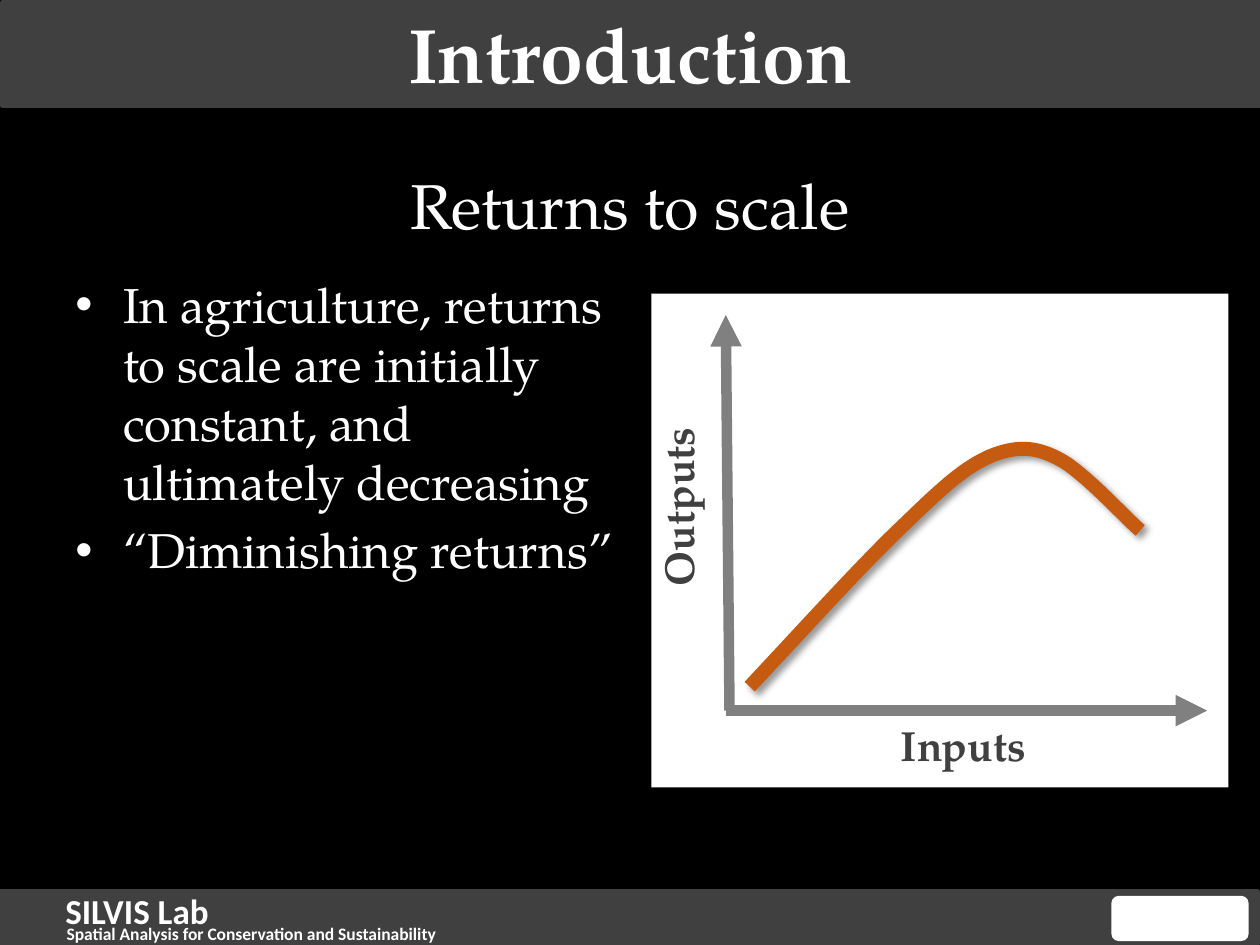
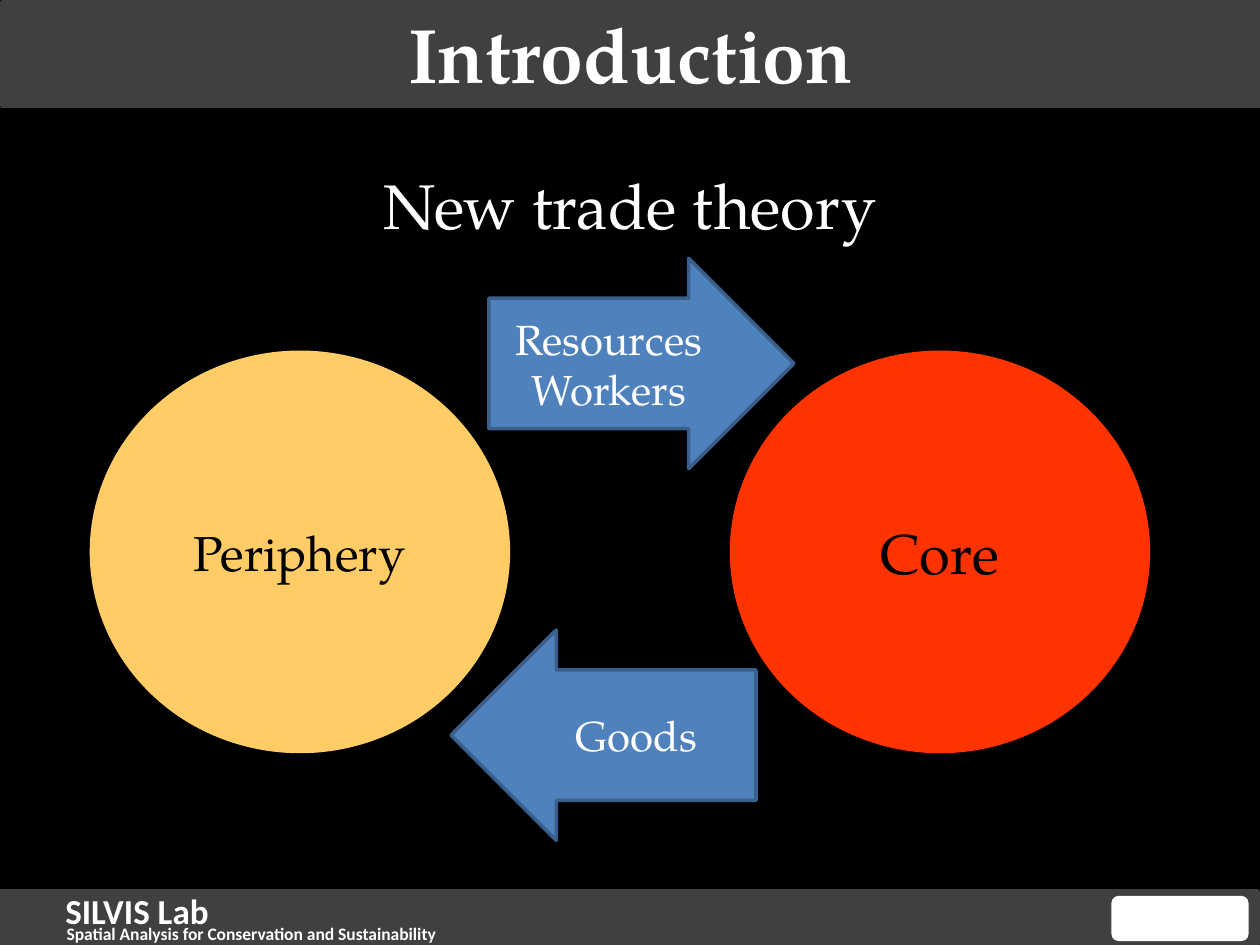
from lxml import etree
from pptx import Presentation
from pptx import util as u
from pptx.dml.color import RGBColor
from pptx.enum import shapes, text
from pptx.oxml.ns import qn

SERIF, SANS = "TeX Gyre Pagella", "Calibri"
WHITE, BLACK, BAND, AXIS = "FFFFFF", "000000", "404040", "808080"
CURVE, ARROW, ARROW_EDGE = "C55A11", "4F81BD", "3A5F8C"
PERIPHERY, CORE = "FFCC66", "FF3300"
CENTER, LEFT = text.PP_ALIGN.CENTER, text.PP_ALIGN.LEFT
MIDDLE, TOP = text.MSO_ANCHOR.MIDDLE, text.MSO_ANCHOR.TOP
KIND = shapes.MSO_SHAPE


def rgb(value):
    """Turn a hex string into a colour."""
    return RGBColor.from_string(value)


def sub(parent, tag, **attrs):
    """Append a drawing element with attributes and return it."""
    el = etree.SubElement(parent, qn(tag))
    for key, value in attrs.items():
        el.set(key, str(value))
    return el


def box(values):
    """Convert left, top, width and height to lengths."""
    return [u.Inches(v) for v in values]


def paint_line(line, color, width):
    """Set the colour and point width of a line."""
    line.color.rgb = rgb(color)
    line.width = u.Pt(width)


def write(tf, lines, size, color=WHITE, font=SERIF, bold=False, align=LEFT, anchor=TOP, bullets=False):
    """Fill a text frame with one paragraph per line."""
    tf.word_wrap = True
    tf.vertical_anchor = anchor
    for i, line in enumerate(lines):
        p = tf.paragraphs[0] if i == 0 else tf.add_paragraph()
        p.alignment = align
        if bullets:
            pPr = p._p.get_or_add_pPr()
            pPr.set("marL", str(u.Inches(0.38)))
            pPr.set("indent", str(u.Inches(-0.38)))
            sub(pPr, "a:buFont", typeface="Arial")
            sub(pPr, "a:buChar", char="•")
            if i:
                p.space_before = u.Pt(size * 0.2)
        r = p.add_run()
        r.text = line
        r.font.name, r.font.size, r.font.bold = font, u.Pt(size), bold
        r.font.color.rgb = rgb(color)


def add_text(s, at, lines, size, **style):
    """Add a text box and return its frame."""
    tf = s.shapes.add_textbox(*box(at)).text_frame
    write(tf, lines, size, **style)
    return tf


def add_shape(s, kind, at, fill, line=None, width=0):
    """Add a flat preset shape."""
    sp = s.shapes.add_shape(kind, *box(at))
    sp.shadow.inherit = False
    sp.fill.solid()
    sp.fill.fore_color.rgb = rgb(fill)
    if line:
        paint_line(sp.line, line, width)
    else:
        sp.line.fill.background()
    return sp


def add_axis(s, start, end):
    """Add a thick axis with an arrowhead at its end."""
    cx = s.shapes.add_connector(shapes.MSO_CONNECTOR.STRAIGHT, *box(start + end))
    paint_line(cx.line, AXIS, 6)
    sub(cx.line._get_or_add_ln(), "a:tailEnd", type="triangle")
    sub(cx._element.spPr, "a:effectLst")


def bezier(a, b, c, d, steps=16):
    """Return points along a cubic curve after its start."""
    points = []
    for i in range(1, steps + 1):
        t = i / steps
        weights = ((1 - t) ** 3, 3 * t * (1 - t) ** 2, 3 * t * t * (1 - t), t ** 3)
        points.append(tuple(u.Inches(sum(w * q[k] for w, q in zip(weights, (a, b, c, d))))
                            for k in (0, 1)))
    return points


def add_curve(s, knots):
    """Draw a shadowed curve through chained cubic segments."""
    builder = s.shapes.build_freeform(*box(knots[0]))
    for i in range(0, len(knots) - 1, 3):
        builder.add_line_segments(bezier(*knots[i:i + 4]), close=False)
    sp = builder.convert_to_shape()
    sp.fill.background()
    paint_line(sp.line, CURVE, 8)
    sp.shadow.inherit = False
    effects = sp._element.spPr.find(qn("a:effectLst"))
    shadow = sub(effects, "a:outerShdw", blurRad=u.Pt(4), dist=u.Pt(3),
                 dir=45 * 60000, algn="tl", rotWithShape=0)
    sub(sub(shadow, "a:srgbClr", val=BLACK), "a:alpha", val=40000)


def add_circle(s, left, color, label, size):
    """Add a labelled region circle."""
    sp = add_shape(s, KIND.OVAL, (left, 2.99, 2.92, 2.78), color, color, 30)
    write(sp.text_frame, [label], size, color=BLACK, align=CENTER, anchor=MIDDLE)


def add_flow(s, kind, left, top, lines):
    """Add a block arrow naming what flows between regions."""
    sp = add_shape(s, kind, (left, top, 2.42, 1.67), ARROW, ARROW_EDGE, 2)
    sp.adjustments[0], sp.adjustments[1] = 0.62, 0.5
    write(sp.text_frame, lines, 24, align=CENTER, anchor=MIDDLE)


def new_slide(prs, heading):
    """Add a slide with bands, footer, title and heading."""
    s = prs.slides.add_slide(prs.slide_layouts[6])
    s.background.fill.solid()
    s.background.fill.fore_color.rgb = rgb(BLACK)
    for at in ((0.02, 0.02, 9.98, 0.82), (0, 7.08, 9.98, 0.41)):
        add_shape(s, KIND.RECTANGLE, at, BAND, BAND, 3)
    add_text(s, (0.42, 7.01, 2.43, 0.44), ["SILVIS Lab"], 20, font=SANS, bold=True)
    add_text(s, (0.43, 7.28, 4.92, 0.17), ["Spatial Analysis for Conservation and Sustainability"],
             10, font=SANS, bold=True)
    add_shape(s, KIND.ROUNDED_RECTANGLE, (8.82, 7.11, 1.09, 0.36), WHITE)
    add_text(s, (0.01, 0, 9.99, 0.83), ["Introduction"], 44, bold=True, align=CENTER, anchor=MIDDLE)
    add_text(s, (0.5, 1, 9, 1.25), [heading], 36, align=CENTER, anchor=MIDDLE)
    return s


def returns_slide(prs):
    """Build the slide on returns to scale."""
    s = new_slide(prs, "Returns to scale")
    add_shape(s, KIND.RECTANGLE, (5.17, 2.33, 4.58, 3.92), WHITE)
    add_text(s, (0.5, 2.13, 4.5, 4.95),
             ["In agriculture, returns to scale are initially constant, and ultimately decreasing",
              "“Diminishing returns”"], 28, bullets=True)
    add_axis(s, (5.76, 5.64), (9.58, 5.64))
    add_axis(s, (5.79, 5.64), (5.76, 2.5))
    add_curve(s, [(5.95, 5.45), (6.42, 4.95), (6.87, 4.45), (7.19, 4.15), (7.51, 3.84),
                  (7.66, 3.71), (7.86, 3.62), (8.06, 3.54), (8.21, 3.54), (8.4, 3.64),
                  (8.6, 3.74), (8.94, 4.12), (9.05, 4.21)])
    label = dict(size=24, color=BAND, bold=True)
    inputs = add_text(s, (7.05, 5.66, 1.21, 0.5), ["Inputs"], **label)
    outputs = add_text(s, (5.13, 3.38, 0.61, 1.37), ["Outputs"], **label)
    outputs._txBody.bodyPr.set("vert", "vert270")
    inputs.word_wrap = outputs.word_wrap = False


def trade_slide(prs):
    """Build the slide on new trade theory."""
    s = new_slide(prs, "New trade theory")
    add_circle(s, 6, CORE, "Core", 32)
    add_circle(s, 0.92, PERIPHERY, "Periphery", 28)
    add_flow(s, KIND.RIGHT_ARROW, 3.88, 2.05, ["Resources", "Workers"])
    add_flow(s, KIND.LEFT_ARROW, 3.58, 5, ["Goods"])


def main():
    """Build and save the presentation."""
    prs = Presentation()
    prs.slide_width, prs.slide_height = u.Inches(10), u.Inches(7.5)
    returns_slide(prs)
    trade_slide(prs)
    prs.save("out.pptx")


if __name__ == "__main__":
    main()
